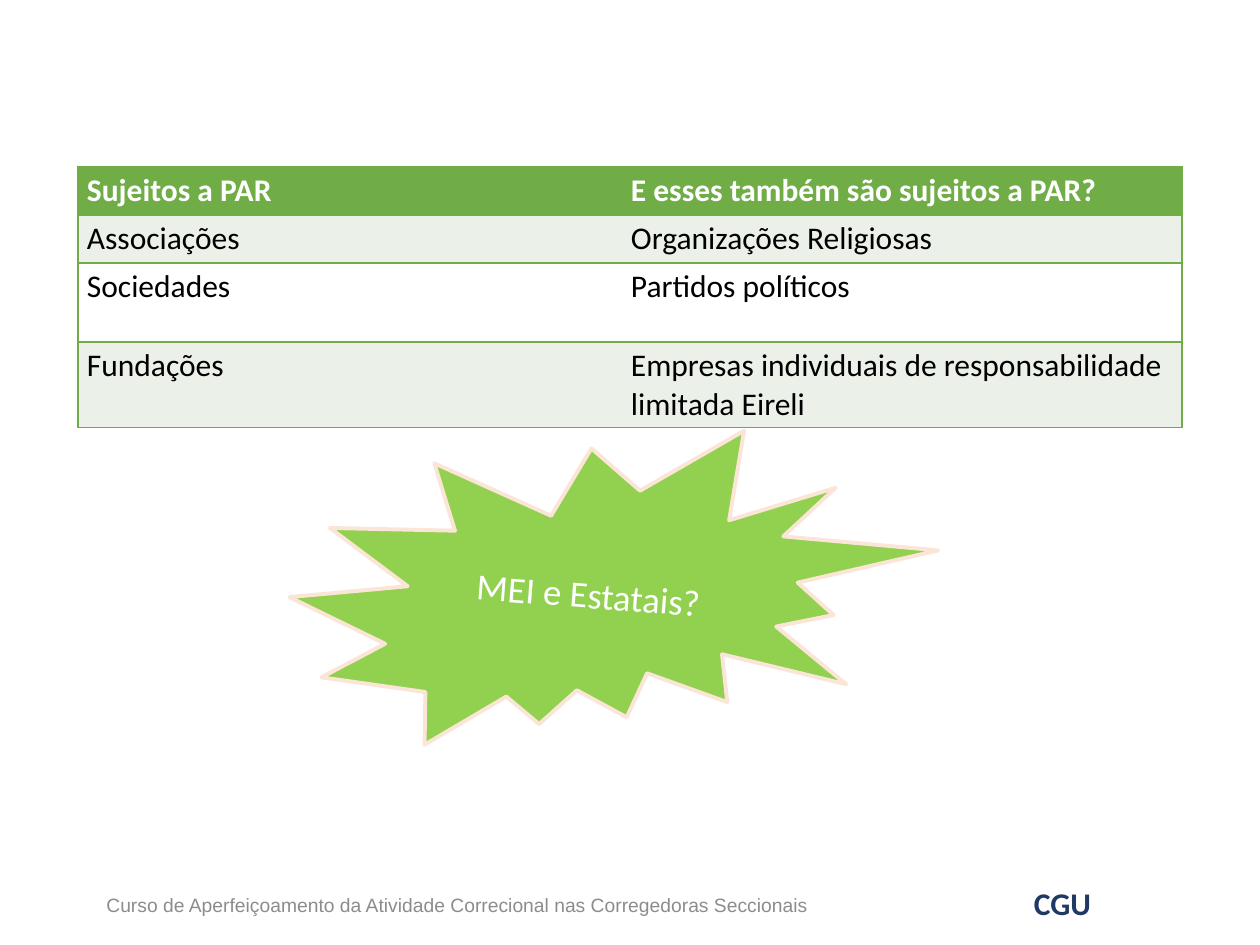
import pptx
import pptx.dml.color
import pptx.enum.shapes
import pptx.enum.text
import pptx.oxml
import pptx.oxml.ns
import pptx.util

EMU_PER_PX = 914400 / 126
COLORS = {
    "green": "70AD47", "band": "EBF1E9", "white": "FFFFFF", "black": "000000",
    "burst": "92D050", "peach": "FBE5D6", "gray": "8C8C8C", "navy": "203864",
}
ANCHOR = pptx.enum.text.MSO_ANCHOR
ALIGN = pptx.enum.text.PP_ALIGN


def px(length):
    return pptx.util.Emu(round(length * EMU_PER_PX))


def rgb(name):
    return pptx.dml.color.RGBColor.from_string(COLORS[name])


class SlideBuilder:
    font = "Calibri"
    size = 18

    def __init__(self, slide):
        self.slide = slide

    def set_text(self, frame, text, color, size=None, font=None, bold=False, align=ALIGN.LEFT):
        frame.text = text
        frame.word_wrap = True
        for paragraph in frame.paragraphs:
            paragraph.alignment = align
            for run in paragraph.runs:
                run.font.name = font or self.font
                run.font.size = pptx.util.Pt(size or self.size)
                run.font.bold = bold
                run.font.color.rgb = rgb(color)

    def label(self, box, text, color, anchor=ANCHOR.TOP, **style):
        frame = self.slide.shapes.add_textbox(*map(px, box)).text_frame
        self.set_text(frame, text, color, **style)
        frame.vertical_anchor = anchor

    def border(self, cell, visible_sides):
        properties = cell._tc.get_or_add_tcPr()
        for index, side in enumerate("LRTB"):
            paint = "<a:noFill/>"
            if side in visible_sides:
                paint = f'<a:solidFill><a:srgbClr val="{COLORS["green"]}"/></a:solidFill>'
            line = pptx.oxml.parse_xml(
                f'<a:ln{side} {pptx.oxml.ns.nsdecls("a")} w="12700">{paint}</a:ln{side}>')
            properties.insert(index, line)

    def table(self, left, top, widths, heights, rows):
        table = self.slide.shapes.add_table(
            len(rows), len(widths), px(left), px(top), px(sum(widths)), px(sum(heights))).table
        for column, width in zip(table.columns, widths):
            column.width = px(width)
        for row, height in zip(table.rows, heights):
            row.height = px(height)
        for r, texts in enumerate(rows):
            fill = "green" if r == 0 else "band" if r % 2 else "white"
            for c, text in enumerate(texts):
                cell = table.cell(r, c)
                cell.margin_left = cell.margin_right = px(9)
                cell.margin_top = cell.margin_bottom = px(5)
                cell.fill.solid()
                cell.fill.fore_color.rgb = rgb(fill)
                self.set_text(cell.text_frame, text, "black" if r else "white", bold=r == 0)
                self.border(cell, "TB" + ("L" if c == 0 else "R"))

    def burst(self, box, text, rotation):
        star = self.slide.shapes.add_shape(
            pptx.enum.shapes.MSO_SHAPE.EXPLOSION2, *map(px, box))
        star.rotation = rotation
        star.shadow.inherit = False
        star.fill.solid()
        star.fill.fore_color.rgb = rgb("burst")
        star.line.color.rgb = rgb("peach")
        star.line.width = pptx.util.Pt(2.25)
        self.set_text(star.text_frame, text, "white", size=21, align=ALIGN.CENTER)
        star.text_frame.vertical_anchor = ANCHOR.MIDDLE


def main():
    presentation = pptx.Presentation()
    presentation.slide_width = px(1260)
    presentation.slide_height = px(945)
    builder = SlideBuilder(presentation.slides.add_slide(presentation.slide_layouts[6]))

    # Footer
    builder.label((94, 875, 1086, 60),
                  "Curso de Aperfeiçoamento da Atividade Correcional nas Corregedoras Seccionais",
                  "gray", ANCHOR.MIDDLE, size=11, font="Arial")
    builder.label((998, 878, 129, 50), "CGU", "navy", bold=True, align=ALIGN.CENTER)

    # Who is subject to PAR
    builder.table(78, 167, (544, 560), (48, 48, 79, 85), [
        ("Sujeitos a PAR", "E esses também são sujeitos a PAR?"),
        ("Associações", "Organizações Religiosas"),
        ("Sociedades", "Partidos políticos"),
        ("Fundações", "Empresas individuais de responsabilidade limitada Eireli"),
    ])

    # Question to the class
    builder.burst((291, 421, 643, 338), "MEI e Estatais?", 4.5)

    presentation.save("out.pptx")


if __name__ == "__main__":
    main()
